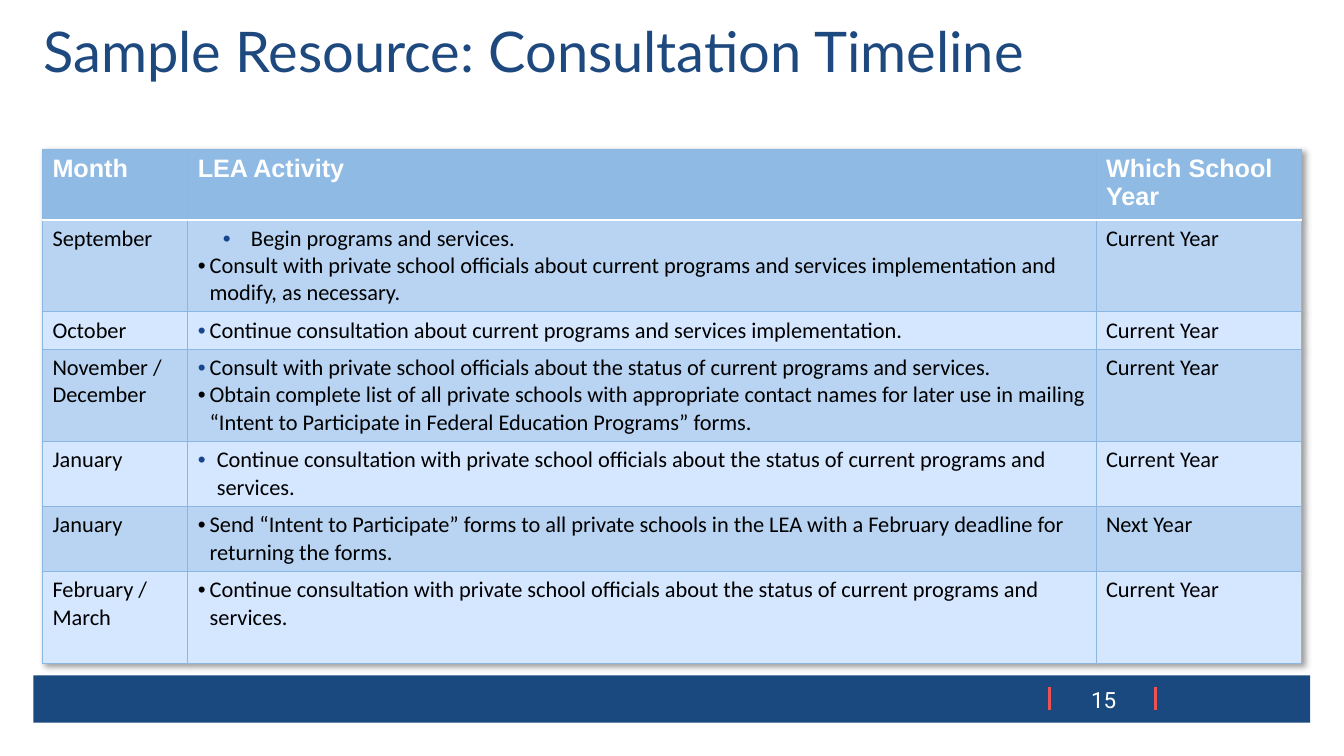
from collections import namedtuple

from lxml import etree
from pptx import Presentation, util as u
from pptx.dml.color import RGBColor
from pptx.enum import shapes, text
from pptx.oxml import ns

Box = namedtuple("Box", "left top width height")

COLORS = {
    "navy": "1A497F", "title": "1E497F", "tick": "EC5153", "white": "FFFFFF",
    "black": "000000", "bullet": "17468E", "header": "8FBAE4",
    "border": "8AB6E1", "band_dark": "B8D4F2", "band_light": "D5E6FF",
}
COLUMN_WIDTHS = [3.66, 22.89, 5.18]
ROW_HEIGHTS = [1.7, 2.32, 0.94, 2.32, 1.64, 1.64, 2.32]
HEADINGS = ["Month", "LEA Activity", "Which School Year"]

# Each activity: text, bullet colour, left margin and hanging indent in cm
TIMELINE = [
    ("September", [
        ("Begin programs and services.", "bullet", 1.34, 0.71),
        ("Consult with private school officials about current programs and "
         "services implementation and modify, as necessary.", "black", 0.3, 0.3),
    ], "Current Year"),
    ("October", [
        ("Continue consultation about current programs and services "
         "implementation.", "bullet", 0.3, 0.3),
    ], "Current Year"),
    ("November / December", [
        ("Consult with private school officials about the status of current "
         "programs and services.", "bullet", 0.3, 0.3),
        ("Obtain complete list of all private schools with appropriate contact "
         "names for later use in mailing “Intent to Participate in Federal "
         "Education Programs” forms.", "black", 0.3, 0.3),
    ], "Current Year"),
    ("January", [
        ("Continue consultation with private school officials about the status "
         "of current programs and services.", "bullet", 0.48, 0.48),
    ], "Current Year"),
    ("January", [
        ("Send “Intent to Participate” forms to all private schools in the LEA "
         "with a February deadline for returning the forms.", "black", 0.3, 0.3),
    ], "Next Year"),
    ("February / March", [
        ("Continue consultation with private school officials about the status "
         "of current programs and services.", "black", 0.3, 0.3),
    ], "Current Year"),
]


def rgb(name):
    return RGBColor.from_string(COLORS[name])


def add_child(parent, tag, **attributes):
    child = etree.SubElement(parent, ns.qn(tag))
    for key, value in attributes.items():
        child.set(key, str(value))
    return child


def add_run(paragraph, words, font, size, color, bold=False):
    run = paragraph.add_run()
    run.text = words
    run.font.name = font
    run.font.size = u.Pt(size)
    run.font.bold = bold
    run.font.color.rgb = rgb(color)


def add_bullet(paragraph, color, margin, hanging):
    properties = paragraph._p.get_or_add_pPr()
    properties.set("marL", str(u.Cm(margin)))
    properties.set("indent", str(-u.Cm(hanging)))
    add_child(add_child(properties, "a:buClr"), "a:srgbClr", val=COLORS[color])
    add_child(properties, "a:buFont", typeface="Arial")
    add_child(properties, "a:buChar", char="•")


def style_cell(cell, fill, top=("border", 0.75), bottom=("border", 0.75)):
    """Set the borders, then the fill, in the order the schema wants."""
    properties = cell._tc.get_or_add_tcPr()
    side = ("border", 0.75)
    edges = {"a:lnL": side, "a:lnR": side, "a:lnT": top, "a:lnB": bottom}
    for tag, (color, width) in edges.items():
        line = add_child(properties, tag, w=u.Pt(width))
        add_child(add_child(line, "a:solidFill"), "a:srgbClr", val=COLORS[color])
    cell.fill.solid()
    cell.fill.fore_color.rgb = rgb(fill)


def add_table_shadow(table):
    effects = etree.Element(ns.qn("a:effectLst"))
    shadow = add_child(effects, "a:outerShdw", blurRad=u.Pt(4), dist=u.Pt(3),
                       dir=2700000, algn="tl", rotWithShape=0)
    color = add_child(shadow, "a:srgbClr", val=COLORS["black"])
    add_child(color, "a:alpha", val=40000)
    table._tbl.tblPr.insert(0, effects)


def place_title(slide, box):
    title = slide.shapes.title
    title.left, title.top, title.width, title.height = map(u.Cm, box)
    frame = title.text_frame
    frame.auto_size = text.MSO_AUTO_SIZE.NONE
    frame.vertical_anchor = text.MSO_ANCHOR.TOP
    heading = frame.paragraphs[0]
    heading.alignment = text.PP_ALIGN.LEFT
    heading.line_spacing = 0.9
    add_run(heading, "Sample Resource: Consultation Timeline", "Lato", 40, "title")


def build_timeline(slide, box):
    table = slide.shapes.add_table(len(ROW_HEIGHTS), len(COLUMN_WIDTHS),
                                   *map(u.Cm, box)).table
    table.horz_banding = False
    add_table_shadow(table)
    for column, width in zip(table.columns, COLUMN_WIDTHS):
        column.width = u.Cm(width)
    for row, height in zip(table.rows, ROW_HEIGHTS):
        row.height = u.Cm(height)

    header_rule = ("white", 2)
    for index, heading in enumerate(HEADINGS):
        cell = table.cell(0, index)
        style_cell(cell, "header", bottom=header_rule)
        add_run(cell.text_frame.paragraphs[0], heading, "Arial", 18, "white", True)

    for index, (month, activities, year) in enumerate(TIMELINE, start=1):
        cells = [table.cell(index, column) for column in range(len(HEADINGS))]
        band = "band_dark" if index % 2 else "band_light"
        for cell in cells:
            style_cell(cell, band, top=header_rule if index == 1 else ("border", 0.75))
        for cell, words in ((cells[0], month), (cells[2], year)):
            add_run(cell.text_frame.paragraphs[0], words, "Calibri", 16, "black")
        frame = cells[1].text_frame
        for order, (words, color, margin, hanging) in enumerate(activities):
            activity = frame.add_paragraph() if order else frame.paragraphs[0]
            add_bullet(activity, color, margin, hanging)
            add_run(activity, words, "Calibri", 16, "black")


def build_footer(slide, box):
    bar = slide.shapes.add_shape(shapes.MSO_SHAPE.RECTANGLE, *map(u.Cm, box))
    bar.shadow.inherit = False
    bar.fill.solid()
    bar.fill.fore_color.rgb = rgb("navy")
    bar.line.fill.background()

    for offset in (25.6, 28.29):
        x = u.Cm(box.left + offset)
        tick = slide.shapes.add_connector(
            shapes.MSO_CONNECTOR.STRAIGHT, x, u.Cm(box.top + 0.3),
            x, u.Cm(box.top + 0.86))
        tick.line.color.rgb = rgb("tick")
        tick.line.width = u.Pt(2.25)
        add_child(tick._element.spPr, "a:effectLst")

    page_number = slide.shapes.add_textbox(
        u.Cm(box.left + 26.16), u.Cm(box.top + 0.13), u.Cm(1.63), u.Cm(0.94))
    frame = page_number.text_frame
    frame.word_wrap = True
    frame.vertical_anchor = text.MSO_ANCHOR.MIDDLE
    frame.paragraphs[0].alignment = text.PP_ALIGN.CENTER
    add_run(frame.paragraphs[0], "15", "Roboto", 16, "white")


def main():
    deck = Presentation()
    deck.slide_width, deck.slide_height = u.Cm(33.87), u.Cm(19.05)
    slide = deck.slides.add_slide(deck.slide_layouts.get_by_name("Title Only"))
    build_footer(slide, Box(0.84, 17.02, 32.18, 1.19))
    place_title(slide, Box(0.84, 0.48, 32.18, 1.96))
    build_timeline(slide, Box(1.07, 3.76, sum(COLUMN_WIDTHS), sum(ROW_HEIGHTS)))
    deck.save("out.pptx")


if __name__ == "__main__":
    main()
